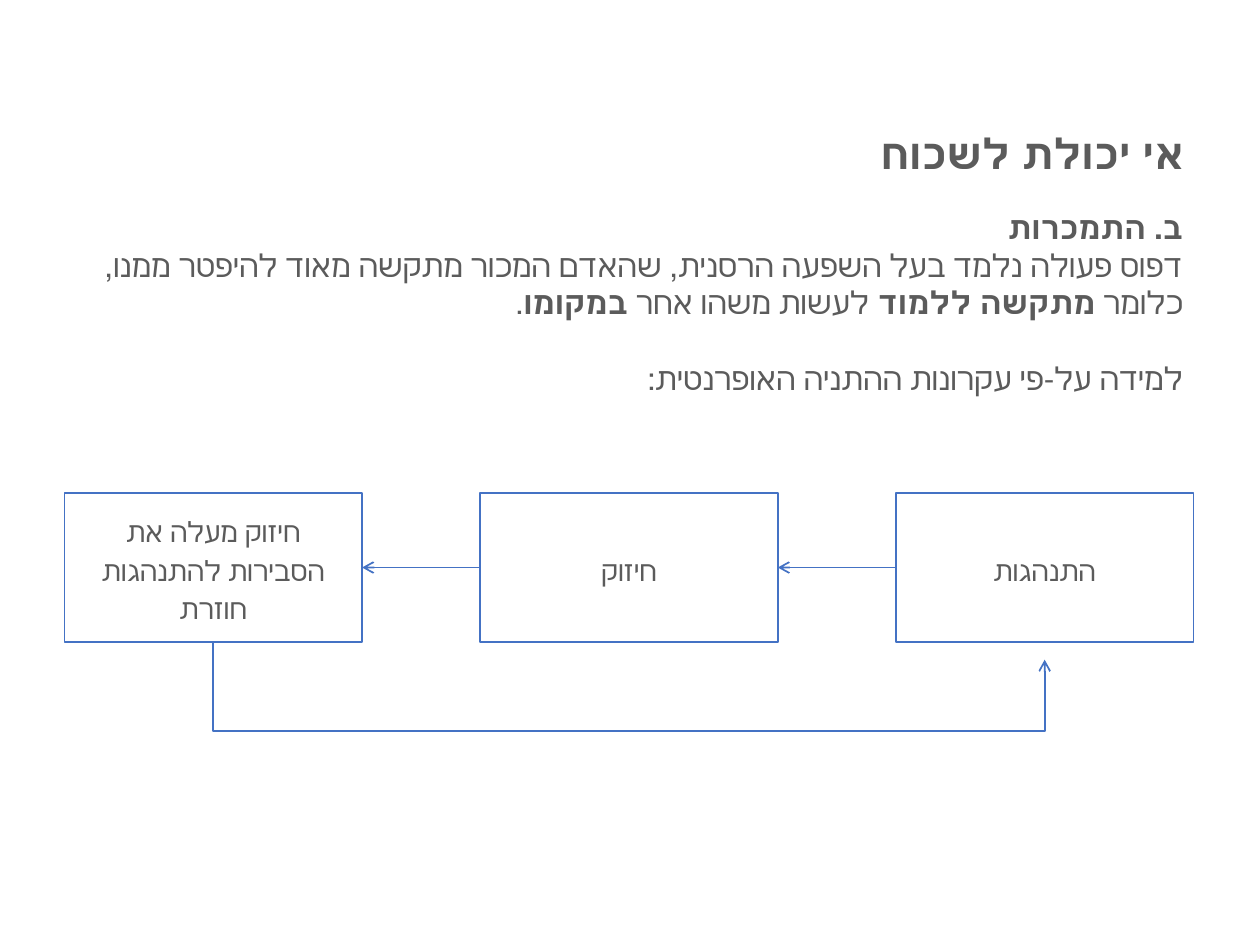
from dataclasses import dataclass

from lxml import etree
from pptx import Presentation
from pptx.dml.color import RGBColor
from pptx.enum.shapes import MSO_CONNECTOR, MSO_SHAPE
from pptx.enum.text import MSO_ANCHOR, MSO_AUTO_SIZE, PP_ALIGN
from pptx.oxml.ns import qn
from pptx.util import Cm, Pt

RECTANGLE = MSO_SHAPE.RECTANGLE
STRAIGHT = MSO_CONNECTOR.STRAIGHT
MIDDLE, TOP = MSO_ANCHOR.MIDDLE, MSO_ANCHOR.TOP
CENTER, RIGHT = PP_ALIGN.CENTER, PP_ALIGN.RIGHT
LEFT_SIDE, RIGHT_SIDE = 1, 3


@dataclass(frozen=True)
class Theme:
    font: str = "Arial"
    ink: RGBColor = RGBColor(0x5B, 0x5B, 0x5B)
    accent: RGBColor = RGBColor(0x44, 0x72, 0xC4)
    paper: RGBColor = RGBColor(0xFF, 0xFF, 0xFF)
    title_size: int = 24
    body_size: int = 18
    box_size: int = 16
    line_width: int = 1


THEME = Theme()

TITLE = "אי יכולת לשכוח"
BODY = [
    [("ב. התמכרות", True)],
    [
        ("דפוס פעולה נלמד בעל השפעה הרסנית, שהאדם המכור מתקשה מאוד להיפטר ממנו, כלומר ", False),
        ("מתקשה ללמוד ", True),
        ("לעשות משהו אחר ", False),
        ("במקומו", True),
        (".", False),
    ],
    [("למידה על-פי עקרונות ההתניה האופרנטית:", False)],
]
STEPS = ["התנהגות", "חיזוק", "חיזוק מעלה את הסבירות להתנהגות חוזרת"]

BOX_LEFT, BOX_TOP, BOX_STEP = 1.3, 9.94, 8.38
BOX_WIDTH, BOX_HEIGHT = 6, 3
LOOP_BOTTOM, LOOP_GAP = 14.73, 0.36


def write_paragraph(para, spans, size, align=RIGHT, spacing=1.0, before=0, after=0):
    para.alignment = align
    para.line_spacing = spacing
    para.space_before, para.space_after = Pt(before), Pt(after)
    properties = para._p.get_or_add_pPr()
    for name, value in (("rtl", "1"), ("marL", "0"), ("marR", "0"), ("indent", "0")):
        properties.set(name, value)
    etree.SubElement(properties, qn("a:buNone"))
    for text, bold in spans:
        span = para.add_run()
        span.text = text
        span.font.size, span.font.bold = Pt(size), bold
        span.font.color.rgb = THEME.ink
        span.font.name = THEME.font


def place(holder, left, top, width, height, anchor):
    holder.left, holder.top = Cm(left), Cm(top)
    holder.width, holder.height = Cm(width), Cm(height)
    frame = holder.text_frame
    frame.word_wrap = True
    frame.auto_size = MSO_AUTO_SIZE.NONE
    frame.vertical_anchor = anchor
    return frame


def style_line(line):
    line.color.rgb = THEME.accent
    line.width = Pt(THEME.line_width)


def add_arrowhead(line):
    head = etree.SubElement(line._get_or_add_ln(), qn("a:tailEnd"))
    head.set("type", "arrow")


def add_step_box(page, text, left):
    box = page.shapes.add_shape(
        RECTANGLE, Cm(left), Cm(BOX_TOP), Cm(BOX_WIDTH), Cm(BOX_HEIGHT))
    box.shadow.inherit = False
    box.fill.solid()
    box.fill.fore_color.rgb = THEME.paper
    style_line(box.line)
    box.text_frame.word_wrap = True
    box.text_frame.vertical_anchor = MIDDLE
    write_paragraph(box.text_frame.paragraphs[0], [(text, False)], THEME.box_size,
                    align=CENTER, spacing=1.15, after=10)
    return box


def add_arrow(page, source, target):
    arrow = page.shapes.add_connector(STRAIGHT, 0, 0, 0, 0)
    arrow.begin_connect(source, LEFT_SIDE)
    arrow.end_connect(target, RIGHT_SIDE)
    style_line(arrow.line)
    add_arrowhead(arrow.line)
    etree.SubElement(arrow._element.spPr, qn("a:effectLst"))


def add_return_loop(page, source, target):
    start = source.left + source.width // 2
    end = target.left + target.width // 2
    bottom = source.top + source.height
    builder = page.shapes.build_freeform(start, bottom)
    builder.add_line_segments(
        [(start, Cm(LOOP_BOTTOM)), (end, Cm(LOOP_BOTTOM)), (end, bottom + Cm(LOOP_GAP))],
        close=False)
    loop = builder.convert_to_shape()
    loop.shadow.inherit = False
    loop.fill.background()
    style_line(loop.line)
    add_arrowhead(loop.line)


def main():
    deck = Presentation()
    deck.slide_width, deck.slide_height = Cm(25.4), Cm(19.05)
    page = deck.slides.add_slide(deck.slide_layouts[1])

    title = place(page.shapes.title, 1.27, 2.51, 22.86, 1.12, MIDDLE)
    write_paragraph(title.paragraphs[0], [(TITLE, True)], THEME.title_size)

    body = place(page.placeholders[1], 1.4, 4.06, 22.7, 4.88, TOP)
    for index, spans in enumerate(BODY):
        para = body.add_paragraph() if index else body.paragraphs[0]
        gap = 21.5 if index == len(BODY) - 1 else 0
        write_paragraph(para, spans, THEME.body_size, before=gap)

    last = len(STEPS) - 1
    boxes = [add_step_box(page, text, BOX_LEFT + (last - index) * BOX_STEP)
             for index, text in enumerate(STEPS)]
    for source, target in zip(boxes, boxes[1:]):
        add_arrow(page, source, target)
    add_return_loop(page, boxes[-1], boxes[0])

    deck.save("out.pptx")


if __name__ == "__main__":
    main()
